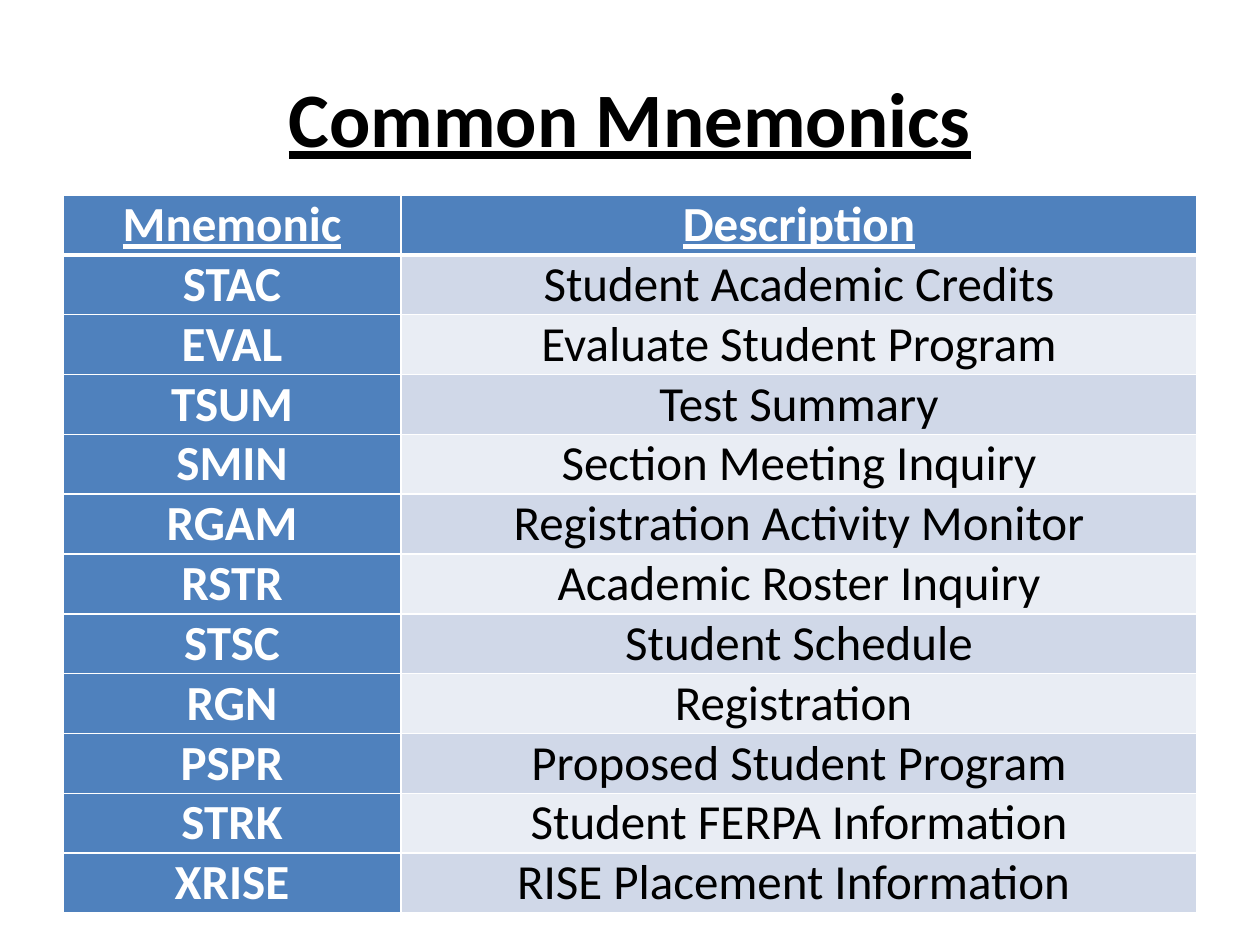
import pptx
import pptx.dml.color
import pptx.enum.text
import pptx.oxml
import pptx.oxml.ns
import pptx.util

PX = 914400 // 126
WHITE, BLACK, BLUE = "FFFFFF", "000000", "4F81BD"
BANDS = ["D0D8E8", "E9EDF4"]
ROWS = [
    ("Mnemonic", "Description"),
    ("STAC", "Student Academic Credits"),
    ("EVAL", "Evaluate Student Program"),
    ("TSUM", "Test Summary"),
    ("SMIN", "Section Meeting Inquiry"),
    ("RGAM", "Registration Activity Monitor"),
    ("RSTR", "Academic Roster Inquiry"),
    ("STSC", "Student Schedule"),
    ("RGN", "Registration "),
    ("PSPR", "Proposed Student Program"),
    ("STRK", "Student FERPA Information"),
    ("XRISE", "RISE Placement Information "),
]


def rgb(color):
    return pptx.dml.color.RGBColor.from_string(color)


def write(tf, text, color, **formats):
    """Put one centred Calibri run in the frame."""
    p = tf.paragraphs[0]
    p.alignment = pptx.enum.text.PP_ALIGN.CENTER
    r = p.add_run()
    r.text = text
    r.font.name = "Calibri"
    r.font.color.rgb = rgb(color)
    for name, value in formats.items():
        setattr(r.font, name, value)


prs = pptx.Presentation()
prs.slide_width, prs.slide_height = 1260 * PX, 945 * PX
s = prs.slides.add_slide(prs.slide_layouts[6])

# Title
tf = s.shapes.add_textbox(63 * PX, 38 * PX, 1134 * PX, 157 * PX).text_frame
tf.word_wrap = True
tf.vertical_anchor = pptx.enum.text.MSO_ANCHOR.MIDDLE
write(tf, "Common Mnemonics", BLACK, size=pptx.util.Pt(44), bold=True, underline=True)

# Table
table = s.shapes.add_table(
    len(ROWS), 2, 63 * PX, 195 * PX, 1134 * PX, 718 * PX
).table
for column, width in zip(table.columns, (338, 796)):
    column.width = width * PX

for i, row in enumerate(ROWS):
    table.rows[i].height = 718 * PX // len(ROWS)
    for j, text in enumerate(row):
        cell = table.cell(i, j)
        strong = i == 0 or j == 0
        margins = {"margin_left": 9, "margin_right": 9, "margin_top": 0, "margin_bottom": 0}
        for name, value in margins.items():
            setattr(cell, name, value * PX)
        cell.fill.solid()
        cell.fill.fore_color.rgb = rgb(BLUE if strong else BANDS[(i - 1) % 2])
        write(cell.text_frame, text, WHITE if strong else BLACK,
              size=pptx.util.Pt(28), bold=strong, underline=i == 0)

        # White borders, thicker between the header and the body
        widths = {"L": 1, "R": 1, "T": 3 if i == 1 else 1, "B": 3 if i == 0 else 1}
        tcPr = cell._tc.get_or_add_tcPr()
        for k, (side, width) in enumerate(widths.items()):
            tcPr.insert(k, pptx.oxml.parse_xml(
                f'<a:ln{side} {pptx.oxml.ns.nsdecls("a")} w="{pptx.util.Pt(width)}">'
                f'<a:solidFill><a:srgbClr val="{WHITE}"/></a:solidFill></a:ln{side}>'))

prs.save("out.pptx")
